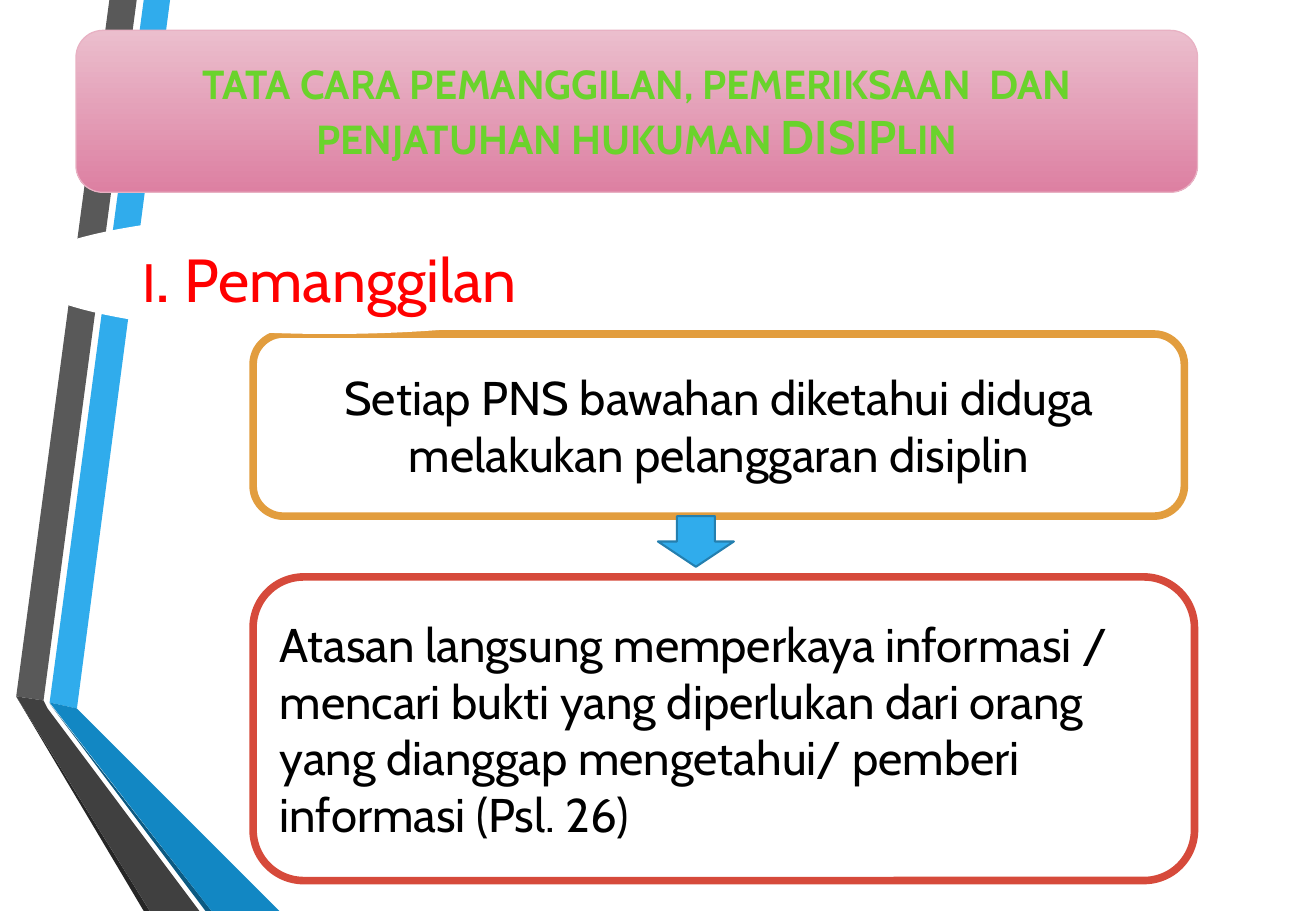
from pptx import Presentation
from pptx.dml.color import RGBColor
from pptx.enum.shapes import MSO_SHAPE
from pptx.enum.text import MSO_ANCHOR, MSO_AUTO_SIZE, PP_ALIGN
from pptx.util import Inches, Pt

ROUND, ARROW, OVAL = MSO_SHAPE.ROUNDED_RECTANGLE, MSO_SHAPE.DOWN_ARROW, MSO_SHAPE.OVAL
MIDDLE, NO_FIT = MSO_ANCHOR.MIDDLE, MSO_AUTO_SIZE.NONE
CENTER, LEFT = PP_ALIGN.CENTER, PP_ALIGN.LEFT

THEME = {
    "font": "Cabin",
    "white": "FFFFFF", "black": "000000", "red": "FF0000", "green": "6AD32C",
    "blue": "30ACEC", "blue_edge": "247FAF", "blue_fold": "1287C3", "blue_shade": "0C5A82",
    "grey": "595959", "grey_fold": "404040", "grey_shade": "262626",
    "pink_top": "EBBECD", "pink_bottom": "DD80A2", "pink_edge": "E8B1C3",
    "amber": "E29D3E", "brick": "D64A3B",
    "title": 24, "title_big": 28, "body": 28,
    "numeral": 32, "dot": 44, "heading": 36,
}

# The slide is a grid of 130 columns by 90 rows
CELL = Inches(1) // 12
COLS, ROWS = 130, 90

prs = Presentation()
prs.slide_width, prs.slide_height = COLS * CELL, ROWS * CELL
s = prs.slides.add_slide(prs.slide_layouts[5])


def add_box(kind, box, fill, edge=None, weight=0):
    sp = s.shapes.add_shape(kind, *(round(v * CELL) for v in box))
    sp.shadow.inherit = False
    sp.fill.solid()
    sp.fill.fore_color.rgb = RGBColor.from_string(THEME[fill])
    if edge:
        sp.line.color.rgb = RGBColor.from_string(THEME[edge])
        sp.line.width = Pt(weight)
    else:
        sp.line.fill.background()
    return sp


def write(sp, runs, color, align=CENTER, bold=False):
    tf = sp.text_frame
    tf.word_wrap, tf.auto_size, tf.vertical_anchor = True, NO_FIT, MIDDLE
    p = tf.paragraphs[0]
    p.alignment = align
    p.font.name, p.font.bold = THEME["font"], bold
    p.font.color.rgb = RGBColor.from_string(THEME[color])
    for text, size in runs:
        r = p.add_run()
        r.text = text
        r.font.size = Pt(THEME[size])


# Folded ribbons along the left edge
ribbons = [
    ("blue", [(4.9, 69.4), (7.6, 70), (16.8, 0), (14.2, 0)]),
    ("grey", [(13.5, 0), (10.8, 0), (1.6, 68.8), (4.3, 69.2)]),
    ("grey_shade", [(1.6, 68.8), (14.2, ROWS), (14.8, ROWS)]),
    ("blue_shade", [(4.9, 69.5), (20.3, ROWS), (20.9, ROWS)]),
    ("blue_fold", [(4.9, 69.4), (20.9, ROWS), (27.6, ROWS), (7.6, 70)]),
    ("grey_fold", [(19.7, ROWS), (4.7, 70), (4.3, 69.2), (1.6, 68.8), (14.8, ROWS)]),
]
for color, points in ribbons:
    start, *rest = [(x * CELL, y * CELL) for x, y in points]
    builder = s.shapes.build_freeform(*start)
    builder.add_line_segments(rest, close=True)
    sp = builder.convert_to_shape()
    sp.shadow.inherit = False
    sp.fill.solid()
    sp.fill.fore_color.rgb = RGBColor.from_string(THEME[color])
    sp.line.fill.background()

# Title on a pink panel
panel = add_box(ROUND, (7.5, 3, 110.8, 16), "pink_top", "pink_edge", 0.75)
panel.fill.gradient()
panel.fill.gradient_angle = 270
for stop, position, color in zip(panel.fill.gradient_stops, (0, 1), ("pink_top", "pink_bottom")):
    stop.position = position
    stop.color.rgb = RGBColor.from_string(THEME[color])

title = s.shapes.title
title.left, title.top, title.width, title.height = panel.left, panel.top, panel.width, panel.height
panel._element.addnext(title._element)
write(title, [("TATA CARA PEMANGGILAN, PEMERIKSAAN  DAN PENJATUHAN HUKUMAN ", "title"),
              ("DISIP", "title_big"), ("LIN", "title")], "green", bold=True)

# Steps of the summons
steps = [
    ((25, 33, 92, 18), "amber", CENTER,
     "Setiap PNS bawahan diketahui diduga melakukan pelanggaran disiplin"),
    ((25, 57, 93, 30), "brick", LEFT,
     "Atasan langsung memperkaya informasi / mencari bukti yang diperlukan dari orang "
     "yang dianggap mengetahui/ pemberi informasi (Psl. 26)"),
]
for box, edge, align, text in steps:
    write(add_box(ROUND, box, "white", edge, 4.5), [(text, "body")], "black", align)

# Arrow between the steps
add_box(ARROW, (65, 51, 7.5, 5), "blue", "blue_edge", 1.25)

# Section heading on a white oval
heading = add_box(OVAL, (2.2, 21, 60.7, 12), "white")
write(heading, [("I", "numeral"), (".", "dot"), (" Pemanggilan", "heading")], "red")

prs.save("out.pptx")
